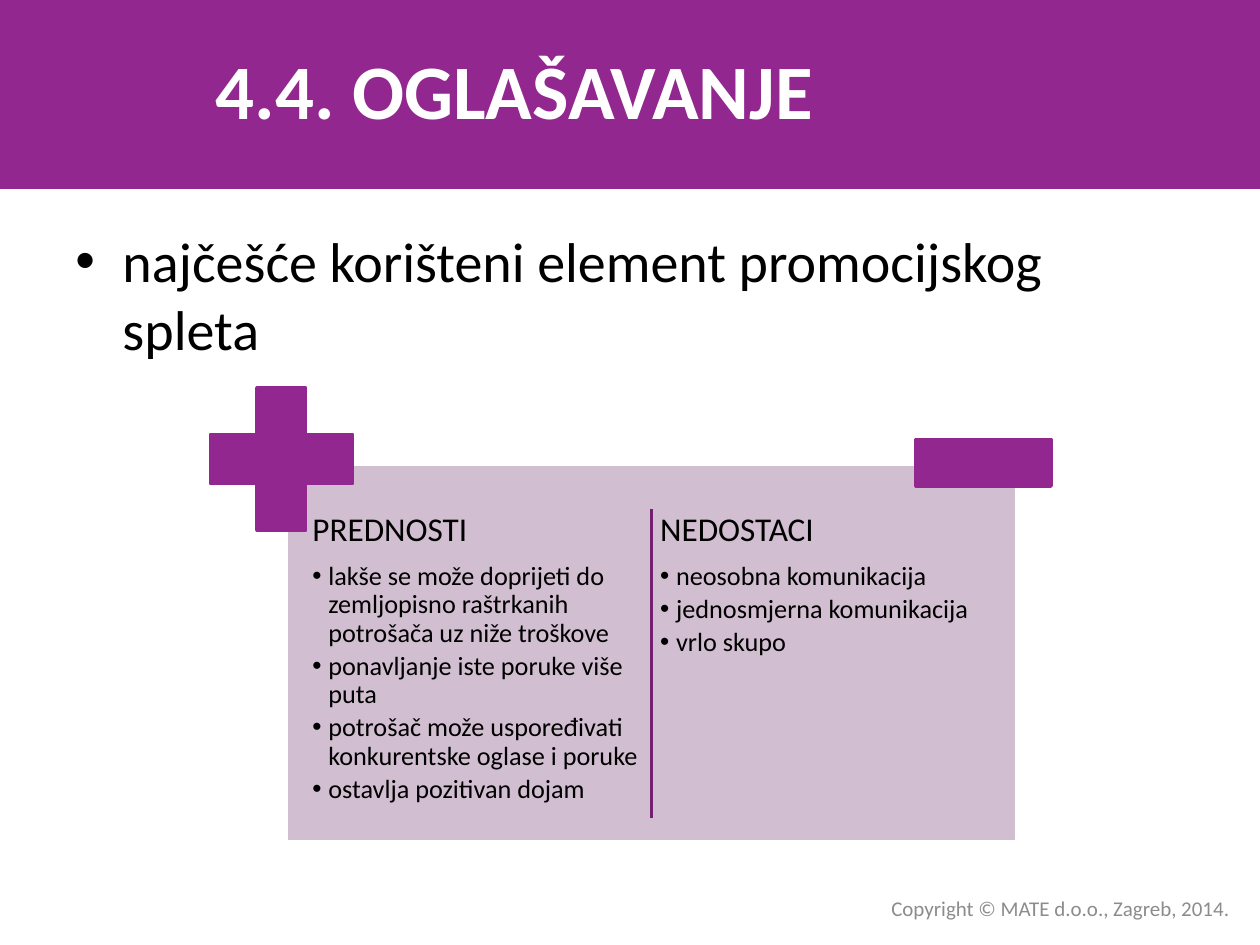
from dataclasses import dataclass

from lxml.etree import SubElement
from pptx import Presentation
from pptx.dml.color import RGBColor
from pptx.enum.shapes import MSO_CONNECTOR, MSO_SHAPE
from pptx.enum.text import MSO_ANCHOR, PP_ALIGN
from pptx.oxml.ns import qn
from pptx.util import Cm, Pt

COLORS = {
    "purple": "92278F",
    "divider": "751F73",
    "panel": "D2BED1",
    "white": "FFFFFF",
    "black": "000000",
    "grey": "8C8C8C",
}
FONT = "Calibri"


@dataclass(frozen=True)
class Box:
    """Left, top, width and height in centimetres."""
    left: float
    top: float
    width: float
    height: float

    def lengths(self) -> tuple:
        return Cm(self.left), Cm(self.top), Cm(self.width), Cm(self.height)


@dataclass(frozen=True)
class Style:
    size: float
    color: str = "black"
    bold: bool = False
    align: PP_ALIGN = PP_ALIGN.LEFT
    line_spacing: float = 1.0
    space_after: float = 0
    bullet_indent: float = 0


@dataclass(frozen=True)
class Column:
    left: float
    heading: str
    points: tuple[str, ...]


TITLE = Style(44, "white", bold=True, align=PP_ALIGN.CENTER)
LEAD = Style(32, bullet_indent=0.95)
COPYRIGHT = Style(12, "grey", align=PP_ALIGN.RIGHT)
HEADING = Style(19, line_spacing=0.9, space_after=8)
POINT = Style(15, line_spacing=0.9, space_after=2.7, bullet_indent=0.32)

COLUMNS = (
    Column(6.2, "PREDNOSTI", (
        "lakše se može doprijeti do zemljopisno raštrkanih potrošača uz niže troškove",
        "ponavljanje iste poruke više puta",
        "potrošač može uspoređivati konkurentske oglase i poruke",
        "ostavlja pozitivan dojam",
    )),
    Column(13.21, "NEDOSTACI", (
        "neosobna komunikacija",
        "jednosmjerna komunikacija",
        "vrlo skupo",
    )),
)


def rgb(name: str) -> RGBColor:
    return RGBColor.from_string(COLORS[name])


def add_block(slide, kind: MSO_SHAPE, box: Box, fill: str, outline: str | None = None):
    block = slide.shapes.add_shape(kind, *box.lengths())
    block.shadow.inherit = False
    block.fill.solid()
    block.fill.fore_color.rgb = rgb(fill)
    if outline:
        block.line.color.rgb = rgb(outline)
        block.line.width = Pt(2)
    else:
        block.line.fill.background()
    return block


def add_text(slide, box: Box, lines: list[tuple[str, Style]],
             anchor: MSO_ANCHOR = MSO_ANCHOR.TOP, inset: float | None = None) -> None:
    """Write one paragraph per (words, style) pair; inset is the margin on all sides."""
    frame = slide.shapes.add_textbox(*box.lengths()).text_frame
    frame.word_wrap = True
    frame.vertical_anchor = anchor
    if inset is not None:
        frame.margin_left = frame.margin_right = Cm(inset)
        frame.margin_top = frame.margin_bottom = Cm(inset)
    for index, (words, style) in enumerate(lines):
        paragraph = frame.add_paragraph() if index else frame.paragraphs[0]
        paragraph.alignment = style.align
        paragraph.line_spacing = style.line_spacing
        paragraph.space_after = Pt(style.space_after)
        if style.bullet_indent:
            add_bullet(paragraph, style.bullet_indent)
        run = paragraph.add_run()
        run.text = words
        run.font.name = FONT
        run.font.size = Pt(style.size)
        run.font.bold = style.bold
        run.font.color.rgb = rgb(style.color)


def add_bullet(paragraph, indent: float) -> None:
    properties = paragraph._p.get_or_add_pPr()
    properties.set("marL", str(Cm(indent)))
    properties.set("indent", str(-Cm(indent)))
    SubElement(properties, qn("a:buFont")).set("typeface", "Arial")
    SubElement(properties, qn("a:buChar")).set("char", "•")


def add_divider(slide, x: float, top: float, bottom: float) -> None:
    divider = slide.shapes.add_connector(
        MSO_CONNECTOR.STRAIGHT, Cm(x), Cm(top), Cm(x), Cm(bottom))
    divider.line.color.rgb = rgb("divider")
    divider.line.width = Pt(2)
    SubElement(divider._element.spPr, qn("a:effectLst"))


def main() -> None:
    presentation = Presentation()
    presentation.slide_width, presentation.slide_height = Cm(25.4), Cm(19.05)
    slide = presentation.slides.add_slide(presentation.slide_layouts[6])

    add_block(slide, MSO_SHAPE.RECTANGLE, Box(0, 0, 25.4, 3.81), "purple")
    add_text(slide, Box(1.27, 4.45, 22.86, 3.28),
             [("najčešće korišteni element promocijskog spleta", LEAD)])
    add_text(slide, Box(0, 0.2, 20.75, 3.18), [("4.4. OGLAŠAVANJE", TITLE)],
             MSO_ANCHOR.MIDDLE)
    add_text(slide, Box(11.91, 17.93, 13.13, 0.76),
             [("Copyright © MATE d.o.o., Zagreb, 2014.", COPYRIGHT)], MSO_ANCHOR.MIDDLE)

    add_block(slide, MSO_SHAPE.RECTANGLE, Box(5.77, 9.35, 14.73, 7.62), "panel", "white")
    for column in COLUMNS:
        lines = [(column.heading, HEADING), *((point, POINT) for point in column.points)]
        add_text(slide, Box(column.left, 10.24, 6.86, 6.53), lines, inset=0.1)

    plus = add_block(slide, MSO_SHAPE.CROSS, Box(4.24, 7.82, 2.87, 2.87), "purple", "purple")
    plus.adjustments[0] = 0.33
    add_block(slide, MSO_SHAPE.RECTANGLE, Box(18.47, 8.86, 2.72, 0.94), "purple", "purple")
    add_divider(slide, 13.13, 10.26, 16.48)

    presentation.save("out.pptx")


if __name__ == "__main__":
    main()
